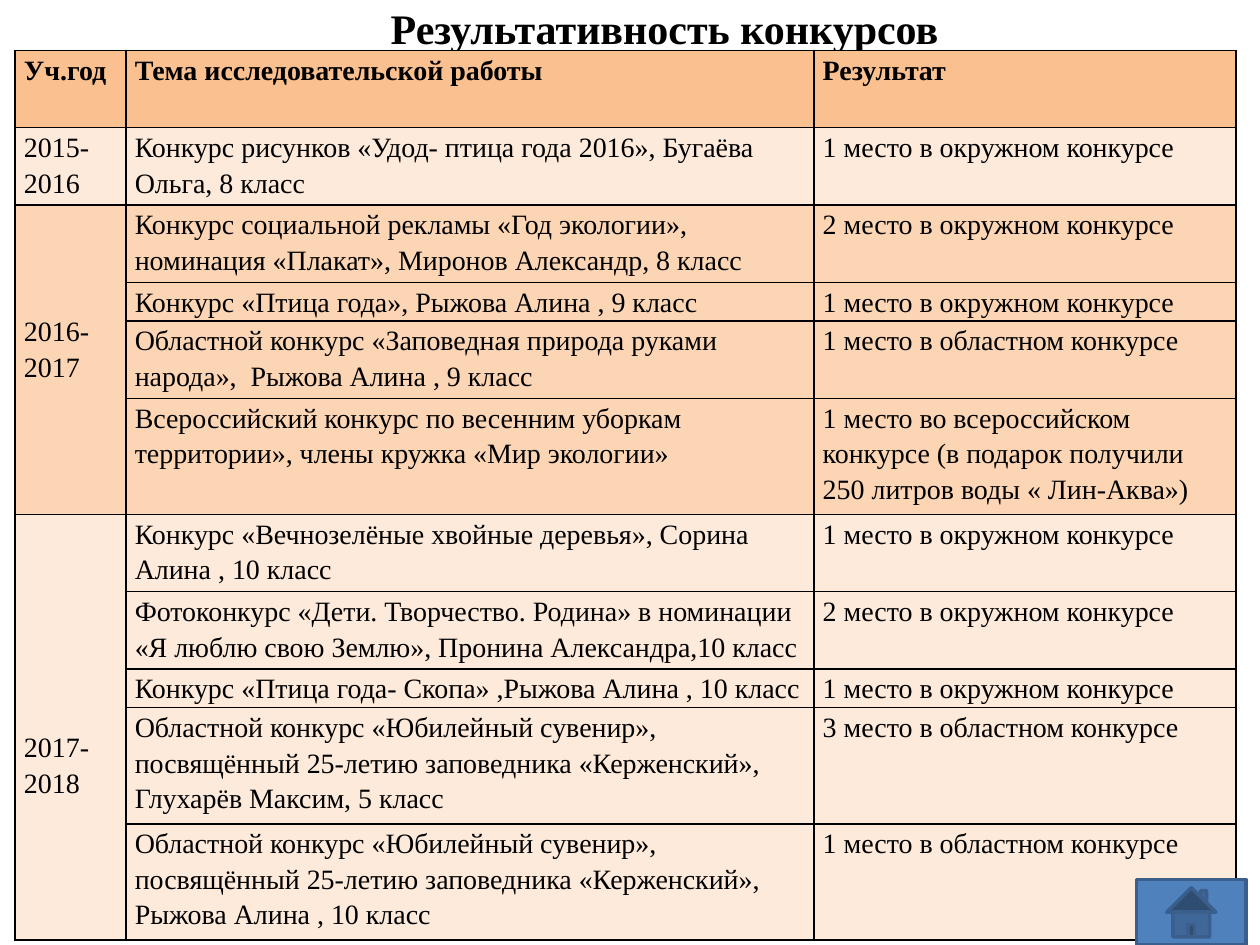
import dataclasses

import lxml.etree
import pptx
import pptx.dml.color
import pptx.enum.shapes
import pptx.enum.text
import pptx.oxml.ns
import pptx.util


@dataclasses.dataclass(frozen=True)
class Theme:
    font: str = "Times New Roman"
    ink: str = "000000"
    head: str = "FAC090"
    light: str = "FDEADA"
    mid: str = "FCD5B5"
    blue: str = "4F81BD"
    edge: str = "3A5F8C"
    title: int = 24
    body: int = 16


THEME = Theme()
WIDE, HIGH = 10, 7.5
COLS = (0.88, 5.46, 3.35)
ROW = 0.307   # height of one line of a row
LINE = 0.283  # height of one line of text

HEADS = ("Уч.год", "Тема исследовательской работы", "Результат")
LOCAL = "место в окружном конкурсе"
AREA = "место в областном конкурсе"
GIFT = ("Областной конкурс «Юбилейный сувенир», посвящённый 25-летию "
        "заповедника «Керженский», ")

# Year, fill, lines above the year, entries of (lines, theme, result)
YEARS = (
    ("2015-2016", THEME.light, 0, (
        (2, "Конкурс рисунков «Удод- птица года 2016», Бугаёва Ольга, 8 класс",
         f"1 {LOCAL}"),
    )),
    ("2016-2017", THEME.mid, 3, (
        (2, "Конкурс социальной рекламы «Год экологии», номинация «Плакат», "
            "Миронов Александр, 8 класс", f"2 {LOCAL}"),
        (1, "Конкурс «Птица года», Рыжова Алина , 9 класс", f"1 {LOCAL}"),
        (2, "Областной конкурс «Заповедная природа руками народа»,  "
            "Рыжова Алина , 9 класс", f"1 {AREA}"),
        (3, "Всероссийский конкурс по весенним уборкам территории», "
            "члены кружка «Мир экологии»",
         "1 место во всероссийском конкурсе (в подарок получили "
         "250 литров воды « Лин-Аква»)"),
    )),
    ("2017-2018", THEME.light, 6, (
        (2, "Конкурс «Вечнозелёные хвойные деревья», Сорина Алина , 10 класс",
         f"1 {LOCAL}"),
        (2, "Фотоконкурс «Дети. Творчество. Родина» в номинации «Я люблю свою "
            "Землю», Пронина Александра,10 класс", f"2 {LOCAL}"),
        (1, "Конкурс «Птица года- Скопа» ,Рыжова Алина , 10 класс",
         f"1 {LOCAL}"),
        (3, GIFT + "Глухарёв Максим, 5 класс", f"3 {AREA}"),
        (3, GIFT + "Рыжова Алина , 10 класс", f"1 {AREA}"),
    )),
)


def color(code):
    return pptx.dml.color.RGBColor.from_string(code)


def paint(thing, code):
    thing.fill.solid()
    thing.fill.fore_color.rgb = color(code)


def place(shape, left, top, width, height):
    shape.left, shape.top, shape.width, shape.height = map(
        pptx.util.Inches, (left, top, width, height))


def add_run(para, text, size, bold=False):
    run = para.add_run()
    run.text = text
    run.font.name = THEME.font
    run.font.size = pptx.util.Pt(size)
    run.font.bold = bold
    run.font.color.rgb = color(THEME.ink)


def add_lines(cell):
    """Draw a thin border on each side; borders come before the fill."""
    props = cell._tc.get_or_add_tcPr()
    name = pptx.oxml.ns.qn
    for spot, side in enumerate(("a:lnL", "a:lnR", "a:lnT", "a:lnB")):
        line = lxml.etree.Element(name(side), w=str(pptx.util.Pt(1)))
        fill = lxml.etree.SubElement(line, name("a:solidFill"))
        lxml.etree.SubElement(fill, name("a:srgbClr"), val=THEME.ink)
        props.insert(spot, line)


def fill_cell(cell, text, fill, bold=False, skip=0):
    cell.margin_left = cell.margin_right = pptx.util.Inches(0.07)
    cell.margin_top = pptx.util.Inches(skip * LINE)
    cell.margin_bottom = 0
    paint(cell, fill)
    add_lines(cell)
    para = cell.text_frame.paragraphs[0]
    para.line_spacing = 1.15
    if text:
        add_run(para, text, THEME.body, bold)


def add_title(slide, text):
    title = slide.shapes.title
    place(title, 0.256 * WIDE, 0, 0.543 * WIDE, 0.058 * HIGH)
    frame = title.text_frame
    frame.margin_top = frame.margin_bottom = 0
    frame.vertical_anchor = pptx.enum.text.MSO_ANCHOR.MIDDLE
    para = frame.paragraphs[0]
    para.alignment = pptx.enum.text.PP_ALIGN.CENTER
    add_run(para, text, THEME.title, True)


def add_grid(slide):
    sizes = [2] + [entry[0] for year in YEARS for entry in year[3]]
    box = [pptx.util.Inches(n) for n in (0.12, 0.4, sum(COLS), sum(sizes) * ROW)]
    table = slide.shapes.add_table(len(sizes), len(COLS), *box).table
    table.first_row = table.horz_banding = False
    for col, width in zip(table.columns, COLS):
        col.width = pptx.util.Inches(width)
    for row, lines in zip(table.rows, sizes):
        row.height = pptx.util.Inches(lines * ROW)

    # Header, then one block of rows for each year
    for col, text in enumerate(HEADS):
        fill_cell(table.cell(0, col), text, THEME.head, bold=True)
    top = 1
    for year, fill, skip, works in YEARS:
        for row, (_, work, prize) in enumerate(works, top):
            first = row == top
            fill_cell(table.cell(row, 0), year if first else "", fill,
                      skip=skip if first else 0)
            fill_cell(table.cell(row, 1), work, fill)
            fill_cell(table.cell(row, 2), prize, fill)
        last = top + len(works) - 1
        if last > top:
            table.cell(top, 0).merge(table.cell(last, 0))
        top = last + 1


def add_home(slide):
    kind = pptx.enum.shapes.MSO_SHAPE.ACTION_BUTTON_HOME
    home = slide.shapes.add_shape(kind, 0, 0, 0, 0)
    place(home, 0.902 * WIDE, 6.98, 0.087 * WIDE, 0.52)
    home.shadow.inherit = False
    paint(home, THEME.blue)
    home.line.color.rgb = color(THEME.edge)
    home.line.width = pptx.util.Pt(2)


def main():
    deck = pptx.Presentation()
    deck.slide_width = pptx.util.Inches(WIDE)
    deck.slide_height = pptx.util.Inches(HIGH)
    slide = deck.slides.add_slide(deck.slide_layouts.get_by_name("Title Only"))
    add_grid(slide)
    add_title(slide, "Результативность конкурсов")
    add_home(slide)
    deck.save("out.pptx")


if __name__ == "__main__":
    main()
